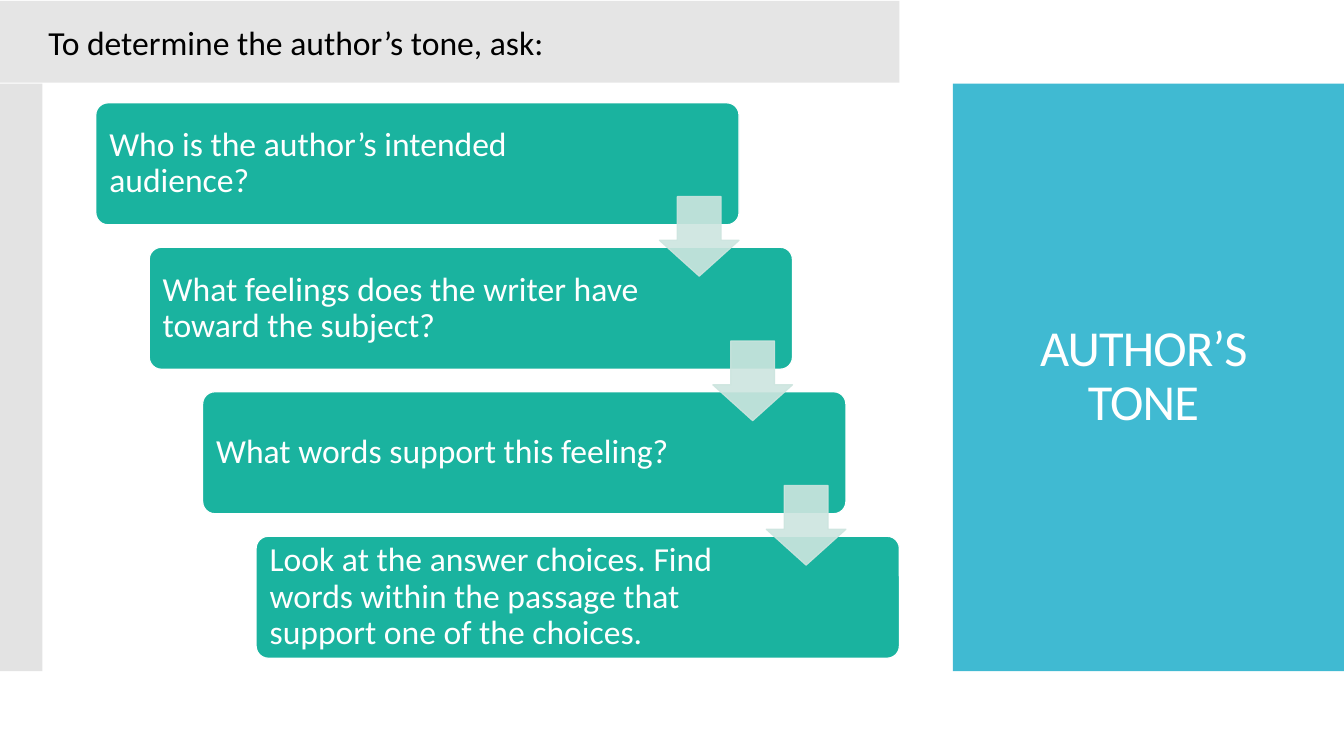
from lxml import etree
from pptx import Presentation
from pptx import util as u
from pptx.dml.color import RGBColor
from pptx.enum import shapes, text
from pptx.oxml import ns

COLORS = {
    "white": "FFFFFF",
    "black": "000000",
    "title_panel": "40BAD2",
    "side_strip": "C8C8C8",
    "heading_bar": "E5E5E5",
    "step": "1AB39F",
    "arrow": "CDE5DF",
}
FONT = "Calibri"
QUESTIONS = [
    "Who is the author’s intended audience?",
    "What feelings does the writer have toward the subject?",
    "What words support this feeling?",
    "Look at the answer choices. Find words within the passage that support one of the choices.",
]
STEP_WIDTH, STEP_HEIGHT = 6.38, 1.21
ARROW_SIZE = 0.79


def set_opacity(shape, percent):
    for color in shape.element.spPr.iter(ns.qn("a:srgbClr")):
        etree.SubElement(color, ns.qn("a:alpha")).set("val", str(percent * 1000))


def add_block(slide, kind, box, color, line=None, opacity=100):
    shape = slide.shapes.add_shape(kind, *[u.Inches(value) for value in box])
    shape.shadow.inherit = False
    shape.fill.solid()
    shape.fill.fore_color.rgb = RGBColor.from_string(COLORS[color])
    if line:
        shape.line.color.rgb = RGBColor.from_string(COLORS[line])
        shape.line.width = u.Pt(0.85)
    else:
        shape.line.fill.background()
    if opacity < 100:
        set_opacity(shape, opacity)
    return shape


def write_text(shape, wording, size, color, align, insets, spacing=1.0):
    frame = shape.text_frame
    frame.text = wording
    frame.word_wrap = True
    frame.vertical_anchor = text.MSO_ANCHOR.MIDDLE
    frame.margin_left, frame.margin_right = [u.Inches(inset) for inset in insets]
    paragraph = frame.paragraphs[0]
    paragraph.alignment = align
    paragraph.line_spacing = spacing
    run = paragraph.runs[0]
    run.font.name = FONT
    run.font.size = u.Pt(size)
    run.font.color.rgb = RGBColor.from_string(COLORS[color])
    return run


def add_title_panel(slide, left, top, width, height):
    panel = add_block(slide, shapes.MSO_SHAPE.RECTANGLE, (left, top, width, height), "title_panel")
    run = write_text(panel, "AUTHOR’S TONE", 36, "white", text.PP_ALIGN.CENTER, (0.38, 0.48), 0.9)
    run._r.get_or_add_rPr().set("spc", "-60")


def add_heading_bar(slide, left, top, width, height):
    bar = add_block(slide, shapes.MSO_SHAPE.RECTANGLE, (left, top, width, height), "heading_bar")
    write_text(bar, "To determine the author’s tone, ask:", 24, "black", text.PP_ALIGN.LEFT, (0.48, 0.1))


def add_staircase(slide, left, top, width, height):
    gaps = len(QUESTIONS) - 1
    step_right = (width - STEP_WIDTH) / gaps
    step_down = (height - STEP_HEIGHT) / gaps
    corners = [(left + i * step_right, top + i * step_down) for i in range(len(QUESTIONS))]

    for question, (x, y) in zip(QUESTIONS, corners):
        box = (x, y, STEP_WIDTH, STEP_HEIGHT)
        step = add_block(slide, shapes.MSO_SHAPE.ROUNDED_RECTANGLE, box, "step", "white")
        step.adjustments[0] = 0.1
        write_text(step, question, 24, "white", text.PP_ALIGN.LEFT, (0.1, 1.44), 0.9)

    for x, y in corners[:-1]:
        box = (x + STEP_WIDTH - ARROW_SIZE, y + 0.93, ARROW_SIZE, ARROW_SIZE)
        arrow = add_block(slide, shapes.MSO_SHAPE.DOWN_ARROW, box, "arrow", "arrow", opacity=90)
        arrow.adjustments[0] = 0.55
        arrow.adjustments[1] = 0.45


def main():
    presentation = Presentation()
    presentation.slide_width = u.Inches(13.33)
    presentation.slide_height = u.Inches(7.5)
    slide = presentation.slides.add_slide(presentation.slide_layouts[6])
    add_title_panel(slide, 9.45, 0.83, 3.88, 5.83)
    add_block(slide, shapes.MSO_SHAPE.RECTANGLE, (0, 0.83, 0.42, 5.83), "side_strip", opacity=50)
    add_staircase(slide, 0.95, 1.02, 7.97, 5.51)
    add_heading_bar(slide, 0, 0.01, 8.92, 0.81)
    presentation.save("out.pptx")


if __name__ == "__main__":
    main()
